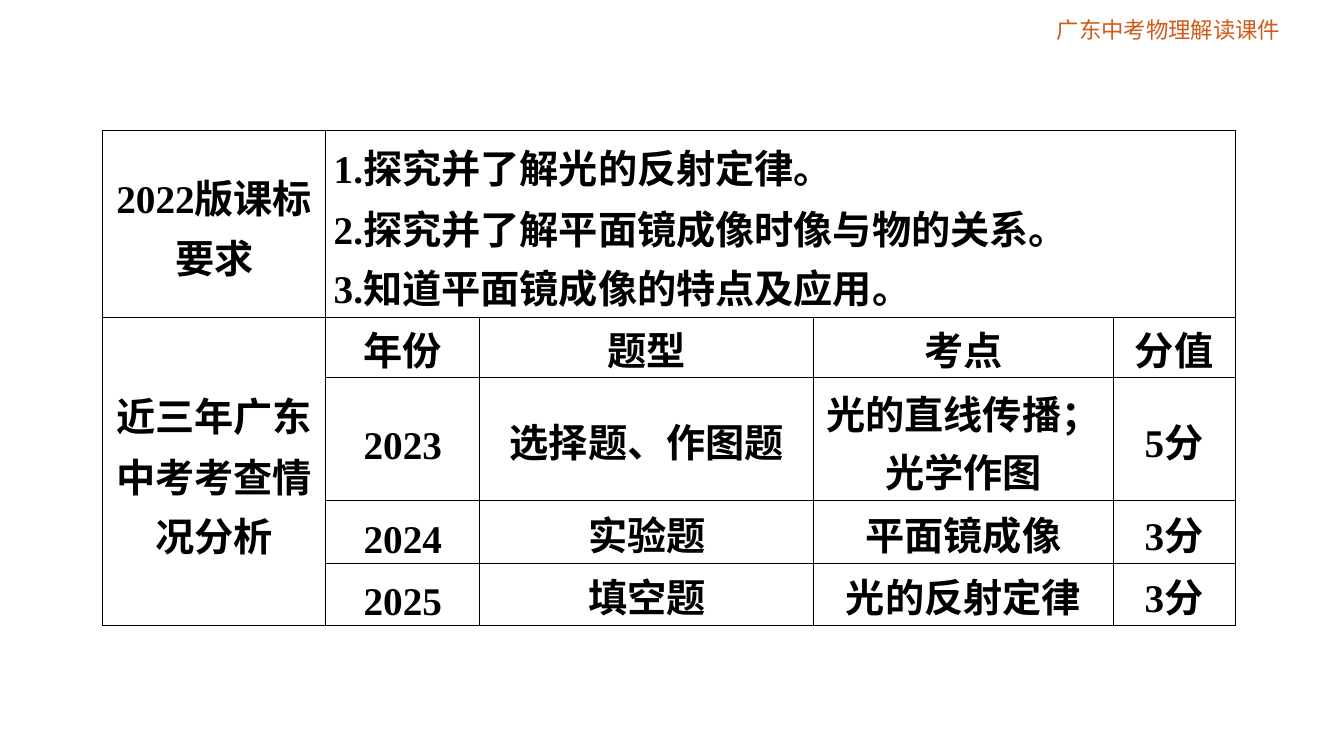
"""Build the slide on exam requirements for light in Guangdong physics."""
from lxml import etree
from pptx import Presentation
from pptx.dml.color import RGBColor
from pptx.enum.text import MSO_ANCHOR, PP_ALIGN
from pptx.oxml.ns import qn
from pptx.util import Inches, Pt

LEFT, CENTER = PP_ALIGN.LEFT, PP_ALIGN.CENTER
MIDDLE = MSO_ANCHOR.MIDDLE
FACE = "Times New Roman"
COLORS = {"ink": "000000", "brand": "D25A18"}
WIDTHS = [2.21, 1.53, 3.31, 2.97, 1.21]
HEIGHTS = [1.86, 0.59, 1.23, 0.62, 0.62]
ROWS = [
    ["2022版课标\n要求",
     "1.探究并了解光的反射定律。\n"
     "2.探究并了解平面镜成像时像与物的关系。\n"
     "3.知道平面镜成像的特点及应用。", "", "", ""],
    ["近三年广东\n中考考查情\n况分析", "年份", "题型", "考点", "分值"],
    ["", "2023", "选择题、作图题", "光的直线传播；\n光学作图", "5分"],
    ["", "2024", "实验题", "平面镜成像", "3分"],
    ["", "2025", "填空题", "光的反射定律", "3分"],
]


def style(para, size, color, bold, align):
    para.alignment = align
    font = para.font
    font.name, font.size, font.bold = FACE, Pt(size), bold
    font.color.rgb = RGBColor.from_string(COLORS[color])


def border(cell):
    props = cell._tc.get_or_add_tcPr()
    for spot, side in enumerate(["a:lnL", "a:lnR", "a:lnT", "a:lnB"]):
        line = etree.Element(qn(side), w=str(Pt(0.75)))
        fill = etree.SubElement(line, qn("a:solidFill"))
        etree.SubElement(fill, qn("a:srgbClr"), val=COLORS["ink"])
        props.insert(spot, line)


deck = Presentation()
deck.slide_width, deck.slide_height = Inches(13.33), Inches(7.5)
slide = deck.slides.add_slide(deck.slide_layouts[6])

head = slide.shapes.add_textbox(
    Inches(10.02), Inches(0.15), Inches(3.14), Inches(0.28)).text_frame
head.margin_left = head.margin_right = head.margin_top = head.margin_bottom = 0
head.word_wrap, head.vertical_anchor = True, MIDDLE
head.text = "广东中考物理解读课件"
style(head.paragraphs[0], 16, "brand", False, CENTER)

table = slide.shapes.add_table(
    len(ROWS), len(WIDTHS), Inches(1.02), Inches(1.29),
    Inches(sum(WIDTHS)), Inches(sum(HEIGHTS))).table
table.first_row = table.horz_banding = False
for col, width in zip(table.columns, WIDTHS):
    col.width = Inches(width)
for row, height in zip(table.rows, HEIGHTS):
    row.height = Inches(height)
table.cell(0, 1).merge(table.cell(0, 4))
table.cell(1, 0).merge(table.cell(4, 0))

for r, row in enumerate(ROWS):
    for c, text in enumerate(row):
        cell = table.cell(r, c)
        cell.fill.background()
        border(cell)
        cell.vertical_anchor = MIDDLE
        cell.margin_left = cell.margin_right = Inches(0.08)
        cell.margin_top = cell.margin_bottom = 0
        cell.text = text
        paras = cell.text_frame.paragraphs
        for para in paras:
            style(para, 28, "ink", True, LEFT if (r, c) == (0, 1) else CENTER)
            para.line_spacing = Pt(44)
        paras[-1].line_spacing = Pt(43 if r == c == 0 else 42)

deck.save("out.pptx")
